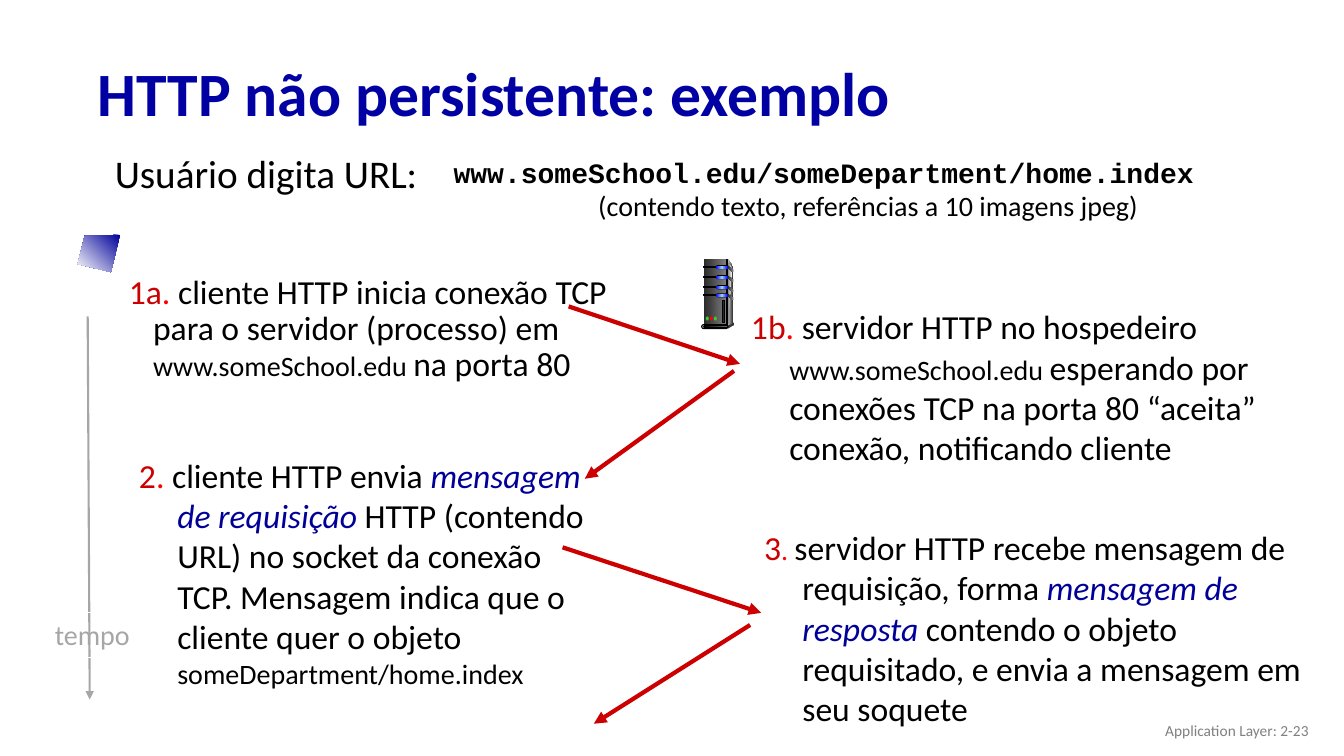
from lxml.etree import SubElement
from pptx import Presentation
from pptx.dml.color import RGBColor
from pptx.enum.shapes import MSO_CONNECTOR, MSO_SHAPE
from pptx.enum.text import MSO_ANCHOR, PP_ALIGN
from pptx.oxml.ns import qn
from pptx.util import Emu, Pt

PX = 9144  # 100 px to the inch

BLACK = RGBColor(0x00, 0x00, 0x00)
WHITE = RGBColor(0xFF, 0xFF, 0xFF)
TITLE = RGBColor(0x00, 0x00, 0xA3)
NAVY = RGBColor(0x00, 0x00, 0x99)
RED = RGBColor(0xCC, 0x00, 0x00)
BRIGHT = RGBColor(0xFF, 0x00, 0x00)
SILVER = RGBColor(0xA6, 0xA6, 0xA6)
GRAY = RGBColor(0x80, 0x80, 0x80)
COAL = RGBColor(0x29, 0x29, 0x29)
DARK = RGBColor(0x33, 0x33, 0x33)
LIGHT = RGBColor(0xDD, 0xDD, 0xDD)
PALE = RGBColor(0xF8, 0xF8, 0xF8)
BLUE = RGBColor(0x00, 0x00, 0xFF)
SKY = RGBColor(0x99, 0xCC, 0xFF)
GREEN = RGBColor(0x33, 0xCC, 0x33)

RECT, PILL, OVAL = MSO_SHAPE.RECTANGLE, MSO_SHAPE.ROUNDED_RECTANGLE, MSO_SHAPE.OVAL


def px(*nums):
    return [Emu(n * PX) for n in nums]


class Deck:
    def __init__(self, width, height, font):
        self.prs = Presentation()
        self.prs.slide_width, self.prs.slide_height = px(width, height)
        self.slide = self.prs.slides.add_slide(self.prs.slide_layouts[6])
        self.font = font

    def text(self, box, runs, size=24, font=None, bold=False, align=PP_ALIGN.LEFT,
             anchor=MSO_ANCHOR.TOP, indent=(0, 0), space=1.0, wrap=True):
        """Each run is (words, colour) plus an optional size and italic flag."""
        shape = self.slide.shapes.add_textbox(*px(*box))
        frame = shape.text_frame
        frame.word_wrap = wrap
        frame.vertical_anchor = anchor
        para = frame.paragraphs[0]
        para.alignment, para.line_spacing = align, space
        if any(indent):
            props = para._p.get_or_add_pPr()
            props.set("marL", str(indent[0] * PX))
            props.set("indent", str(indent[1] * PX))
        for words, color, *more in runs:
            run = para.add_run()
            run.text = words
            run.font.name = font or self.font
            run.font.size = Pt(more[0] if more else size)
            run.font.bold = bold
            run.font.italic = len(more) > 1 and more[1]
            run.font.color.rgb = color
        return shape

    def paint(self, shape, fill, line=None, angle=0):
        """One colour gives a plain fill, several an even gradient."""
        shape.shadow.inherit = False
        if len(fill) == 1:
            shape.fill.solid()
            shape.fill.fore_color.rgb = fill[0]
        else:
            shape.fill.gradient()
            shape.fill.gradient_angle = -angle % 360
            stops = shape._element.spPr.find(qn("a:gradFill")).find(qn("a:gsLst"))
            for stop in list(stops):
                stops.remove(stop)
            for i, color in enumerate(fill):
                stop = SubElement(stops, qn("a:gs"), pos=str(100000 * i // (len(fill) - 1)))
                SubElement(stop, qn("a:srgbClr"), val=str(color))
        if line is None:
            shape.line.fill.background()
        else:
            shape.line.color.rgb = line
            shape.line.width = Pt(0.75)

    def block(self, kind, box, *fill, line=None):
        shape = self.slide.shapes.add_shape(kind, *px(*box))
        if kind == PILL:
            shape.adjustments[0] = 0.5
        self.paint(shape, fill, line)

    def outline(self, points, *fill, angle=0):
        pen = self.slide.shapes.build_freeform(*points[0], scale=PX)
        pen.add_line_segments(points[1:], close=True)
        self.paint(pen.convert_to_shape(), fill, angle=angle)

    def arrow(self, start, end, color, width):
        link = self.slide.shapes.add_connector(MSO_CONNECTOR.STRAIGHT, *px(*start, *end))
        link.line.color.rgb = color
        link.line.width = Pt(width)
        props = link._element.spPr
        SubElement(props.find(qn("a:ln")), qn("a:tailEnd"), type="triangle")
        SubElement(props, qn("a:effectLst"))

    def server(self):
        # Case, front and side
        self.outline([(722, 257), (727, 265), (727, 321), (721, 324)], LIGHT, DARK)
        self.block(RECT, (698, 257, 23, 67), COAL, GRAY)
        self.outline([(722, 261), (726, 266), (724, 292), (722, 322)], GRAY, PALE)
        self.block(RECT, (721, 257, 1, 67), DARK, LIGHT, DARK, line=BLACK)
        # Drive bays with lamps and side vents
        for y in (264, 274, 284, 292):
            self.block(RECT, (698, y, 13, 1), BLACK, line=BLACK)
            self.block(PILL, (710, y - 1, 13, 4), BLACK)
            self.block(PILL, (710, y, 12, 3), BLUE, SKY, BLUE)
            self.outline([(722, y), (727, y + 3), (727, y + 6), (722, y + 2)], COAL, GRAY)
        # Foot
        self.block(OVAL, (727, 320, 1, 3), DARK)
        self.outline([(722, 323), (722, 326), (727, 323), (727, 321)], DARK)
        self.block(PILL, (696, 322, 26, 4), LIGHT, line=BLACK)
        self.block(PILL, (698, 323, 24, 2), BLACK, GRAY, line=BLACK)
        # Status lights and slot
        for x, color in ((700, GREEN), (704, BRIGHT), (708, GREEN)):
            self.block(OVAL, (x, 314, 3, 4), color)
        self.block(RECT, (717, 298, 2, 22), COAL, line=BLACK)


def main():
    deck = Deck(1333, 750, "Calibri")
    hang = (38, -38)
    bullet = (39, -24)

    # Title and time axis
    deck.text((87, 47, 1150, 98), [("HTTP não persistente: exemplo", TITLE)], 44,
              bold=True, anchor=MSO_ANCHOR.MIDDLE, space=0.9)
    deck.arrow((87, 314), (89, 694), SILVER, 1.5)

    # Steps
    deck.text((89, 148, 869, 51), [("Usuário digita URL:", BLACK)], 28,
              indent=bullet, space=0.9)
    deck.text((103, 268, 530, 208), [
        ("1a", RED), (".", BRIGHT),
        (" cliente HTTP inicia conexão TCP para o servidor (processo) em ", BLACK),
        ("www.someSchool.edu ", BLACK, 20), ("na porta 80", BLACK),
    ], indent=bullet, space=0.9)
    deck.text((128, 446, 461, 118), [
        ("2", RED), (".", BRIGHT), (" cliente HTTP envia ", BLACK),
        ("mensagem de requisição", NAVY, 24, True),
        (" HTTP (contendo URL) no socket da conexão TCP. Mensagem indica que o "
         "cliente quer o objeto ", BLACK),
        ("someDepartment/home.index", BLACK, 20),
    ], indent=hang)
    deck.text((735, 299, 589, 165), [
        ("1b", RED), (".", BRIGHT), (" servidor HTTP no hospedeiro ", BLACK),
        ("www.someSchool.edu ", BLACK, 20),
        ("esperando por conexões TCP na porta 80 “aceita” conexão, "
         "notificando cliente", BLACK),
    ], indent=hang)
    deck.text((748, 518, 590, 197), [
        ("3", RED), (". ", BRIGHT, 20),
        ("servidor HTTP recebe mensagem de requisição, forma ", BLACK),
        ("mensagem de resposta", NAVY, 24, True),
        (" contendo o objeto requisitado, e envia a mensagem em seu soquete", BLACK),
    ], indent=hang)

    # Messages between client and server
    for start, end in (((558, 543), (755, 608)), ((744, 620), (589, 718)),
                       ((564, 304), (734, 361)), ((728, 368), (580, 475))):
        deck.arrow(start, end, RED, 3)

    # Time label
    label = deck.text((44, 608, 95, 44), [("tempo", SILVER)], 20,
                      align=PP_ALIGN.CENTER, wrap=False)
    label.line.color.rgb = WHITE
    label.line.width = Pt(0.75)

    # Address typed by the user
    deck.text((512, 182, 698, 91), [("(contendo texto, referências a 10 imagens jpeg)", BLACK)],
              20, align=PP_ALIGN.CENTER)
    deck.text((440, 154, 869, 51), [("www.someSchool.edu/someDepartment/home.index", BLACK)],
              20, "Courier New", True, indent=hang, space=0.85)

    # Client screen and server
    deck.outline([(119, 233), (84, 234), (77, 262), (110, 270)], NAVY, WHITE, angle=135)
    deck.server()

    # Footer
    deck.text((1008, 705, 300, 40), [("Application Layer: 2-23", GRAY)], 11,
              align=PP_ALIGN.RIGHT, anchor=MSO_ANCHOR.MIDDLE)

    deck.prs.save("out.pptx")


if __name__ == "__main__":
    main()
